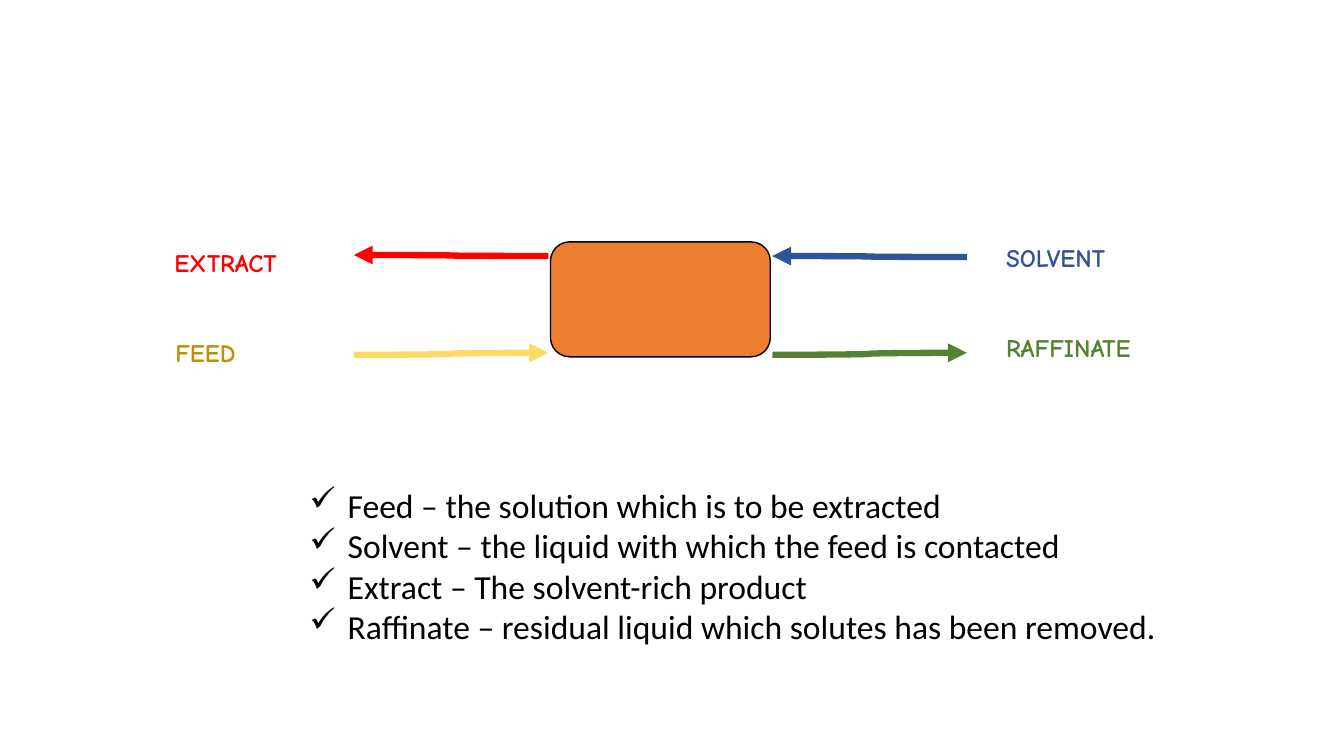
from lxml.etree import SubElement
from pptx import Presentation
from pptx.dml.color import RGBColor
from pptx.enum.shapes import MSO_CONNECTOR, MSO_SHAPE
from pptx.enum.text import MSO_AUTO_SIZE
from pptx.oxml.ns import qn
from pptx.util import Inches, Pt

RED, BLUE, GREEN = "FF0000", "2F5597", "548235"
YELLOW, GOLD, ORANGE, BLACK = "FFD966", "BF9000", "ED7D31", "000000"

STREAMS = [
    (5.44, 2.54, 3.51, 2.53, RED),
    (9.59, 2.55, 7.66, 2.54, BLUE),
    (7.66, 3.52, 9.59, 3.5, GREEN),
    (3.51, 3.52, 5.44, 3.5, YELLOW),
]
LABELS = [
    ("EXTRACT", 1.63, 2.4, 1.39, RED),
    ("FEED", 1.64, 3.3, 0.85, GOLD),
    ("SOLVENT", 9.88, 2.35, 1.41, BLUE),
    ("RAFFINATE", 9.88, 3.25, 1.7, GREEN),
]
DEFINITIONS = [
    "Feed – the solution which is to be extracted",
    "Solvent – the liquid with which the feed is contacted",
    "Extract – The solvent-rich product",
    "Raffinate – residual liquid which solutes has been removed.",
]


def rgb(color):
    return RGBColor.from_string(color)


def add_vessel(s, left, top, width, height):
    sp = s.shapes.add_shape(MSO_SHAPE.ROUNDED_RECTANGLE, Inches(left), Inches(top),
                            Inches(width), Inches(height))
    sp.shadow.inherit = False
    sp.fill.solid()
    sp.fill.fore_color.rgb = rgb(ORANGE)
    sp.line.color.rgb = rgb(BLACK)
    sp.line.width = Pt(1)


def add_stream(s, x1, y1, x2, y2, color):
    cxn = s.shapes.add_connector(MSO_CONNECTOR.CURVE, Inches(x1), Inches(y1),
                                 Inches(x2), Inches(y2))
    cxn.line.color.rgb = rgb(color)
    cxn.line.width = Pt(4.5)
    SubElement(cxn.line._get_or_add_ln(), qn("a:tailEnd"), type="triangle")
    SubElement(cxn._element.spPr, qn("a:effectLst"))


def add_bullet(p):
    pPr = p._p.get_or_add_pPr()
    pPr.set("marL", str(Inches(0.38)))
    pPr.set("indent", str(-Inches(0.38)))
    SubElement(pPr, qn("a:buChar"), char="✓")


def add_text(s, lines, left, top, width, height, color, fmt, bullets=False):
    tf = s.shapes.add_textbox(Inches(left), Inches(top),
                              Inches(width), Inches(height)).text_frame
    tf.word_wrap = False
    tf.auto_size = MSO_AUTO_SIZE.SHAPE_TO_FIT_TEXT
    for i, line in enumerate(lines):
        p = tf.add_paragraph() if i else tf.paragraphs[0]
        if bullets:
            add_bullet(p)
        r = p.add_run()
        r.text = line
        r.font.color.rgb = rgb(color)
        for name, value in fmt.items():
            setattr(r.font, name, value)


def main():
    prs = Presentation()
    prs.slide_width, prs.slide_height = Inches(13.33), Inches(7.5)
    s = prs.slides.add_slide(prs.slide_layouts[6])
    add_vessel(s, 5.46, 2.4, 2.18, 1.14)
    for stream in STREAMS:
        add_stream(s, *stream)
    label_fmt = {"name": "Comic Neue", "size": Pt(18), "bold": True}
    for text, left, top, width, color in LABELS:
        add_text(s, [text], left, top, width, 0.4, color, label_fmt)
    add_text(s, DEFINITIONS, 2.97, 4.76, 8.76, 1.72, BLACK,
             {"name": "Calibri", "size": Pt(24)}, bullets=True)
    prs.save("out.pptx")


if __name__ == "__main__":
    main()
